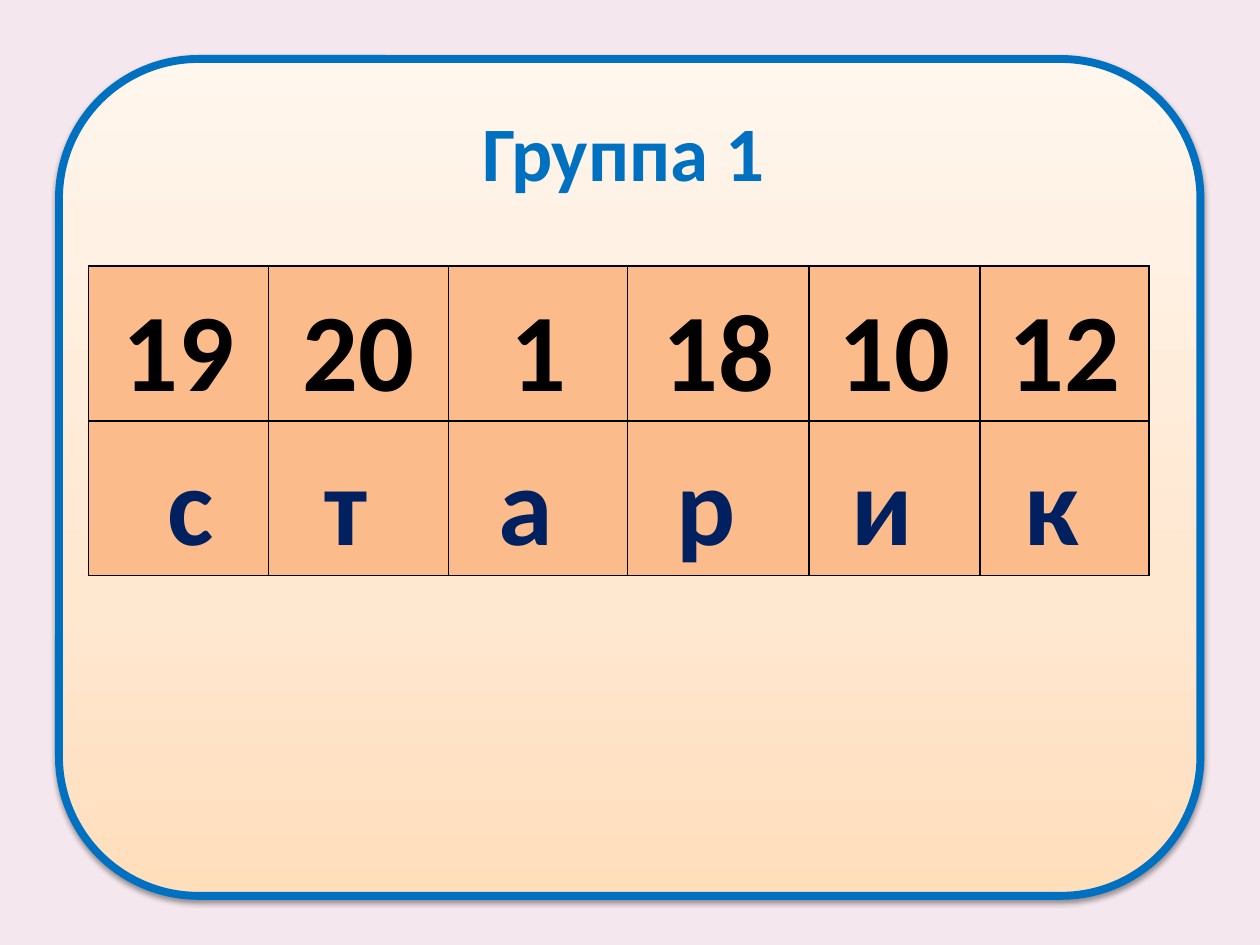
import copy
import pptx
import pptx.util
import pptx.dml.color
import pptx.enum.shapes
import pptx.enum.text
import pptx.oxml
import pptx.oxml.ns

Cm = pptx.util.Cm
Pt = pptx.util.Pt
RGB = pptx.dml.color.RGBColor
Align = pptx.enum.text.PP_ALIGN
Anchor = pptx.enum.text.MSO_ANCHOR

TITLE = "Группа 1"
ROWS = [
    ["19", "20", "1", "18", "10", "12"],
    [" с", "т ", "а ", "р ", "и ", "к "],
]
WIDTHS = [3.63, 3.63, 3.61, 3.66, 3.45, 3.4]
HEIGHT = 3.07
FONT = "Calibri"

PINK = RGB(0xF4, 0xE7, 0xED)
BLUE = RGB(0x00, 0x70, 0xC0)
NAVY = RGB(0x00, 0x20, 0x60)
BLACK = RGB(0x00, 0x00, 0x00)
PEACH = RGB(0xFC, 0xBB, 0x8B)
STOPS = [
    (0, RGB(0xFF, 0xDE, 0xBC)),
    (0.35, RGB(0xFF, 0xE7, 0xD0)),
    (1, RGB(0xFF, 0xF6, 0xED)),
]
INKS = [BLACK, NAVY]

NS = pptx.oxml.ns.nsdecls("a")
SHADOW = (
    f'<a:effectLst {NS}><a:outerShdw blurRad="39370" dist="20320" dir="5400000" '
    'rotWithShape="0"><a:srgbClr val="000000"><a:alpha val="38000"/></a:srgbClr>'
    "</a:outerShdw></a:effectLst>"
)


def write(frame, text, size, color):
    par = frame.paragraphs[0]
    par.alignment = Align.CENTER
    run = par.add_run()
    run.text = text
    run.font.name = FONT
    run.font.size = Pt(size)
    run.font.bold = True
    run.font.color.rgb = color
    return par


def border(cell):
    props = cell._tc.get_or_add_tcPr()
    for spot, side in enumerate(("lnL", "lnR", "lnT", "lnB")):
        props.insert(spot, pptx.oxml.parse_xml(
            f'<a:{side} {NS} w="12700"><a:solidFill><a:srgbClr val="{BLACK}"/>'
            f"</a:solidFill></a:{side}>"))


def panel(slide):
    kind = pptx.enum.shapes.MSO_SHAPE.ROUNDED_RECTANGLE
    shape = slide.shapes.add_shape(kind, Cm(1.19), Cm(1.19), Cm(23.01), Cm(16.87))
    shape.fill.gradient()
    shape.fill.gradient_angle = 90
    first = shape.fill.gradient_stops[0]._gs
    first.addnext(copy.deepcopy(first))
    for stop, (place, color) in zip(shape.fill.gradient_stops, STOPS):
        stop.position = place
        stop.color.rgb = color
    shape.line.color.rgb = BLUE
    shape.line.width = Pt(4.5)
    shape._element.spPr.append(pptx.oxml.parse_xml(SHADOW))
    slide.shapes._spTree.insert(2, shape._element)


def head(slide):
    title = slide.shapes.title
    title.left, title.top = Cm(1.78), Cm(1.98)
    title.width, title.height = Cm(21.59), Cm(4.09)
    title.text_frame.vertical_anchor = Anchor.TOP
    write(title.text_frame, TITLE, 44, BLUE)


def grid(slide):
    frame = slide.shapes.add_table(
        len(ROWS), len(WIDTHS), Cm(1.78), Cm(5.36),
        Cm(sum(WIDTHS)), Cm(HEIGHT * len(ROWS)))
    table = frame.table
    for col, width in zip(table.columns, WIDTHS):
        col.width = Cm(width)
    for row, texts, ink in zip(table.rows, ROWS, INKS):
        row.height = Cm(HEIGHT)
        for cell, text in zip(row.cells, texts):
            cell.margin_left = cell.margin_right = Cm(0.18)
            cell.margin_top = cell.margin_bottom = 0
            cell.fill.solid()
            cell.fill.fore_color.rgb = PEACH
            border(cell)
            write(cell.text_frame, text, 63, ink).line_spacing = 1.15


def main():
    deck = pptx.Presentation()
    deck.slide_width, deck.slide_height = Cm(25.4), Cm(19.05)
    slide = deck.slides.add_slide(deck.slide_layouts[5])
    slide.background.fill.solid()
    slide.background.fill.fore_color.rgb = PINK
    panel(slide)
    head(slide)
    grid(slide)
    deck.save("out.pptx")


if __name__ == "__main__":
    main()
